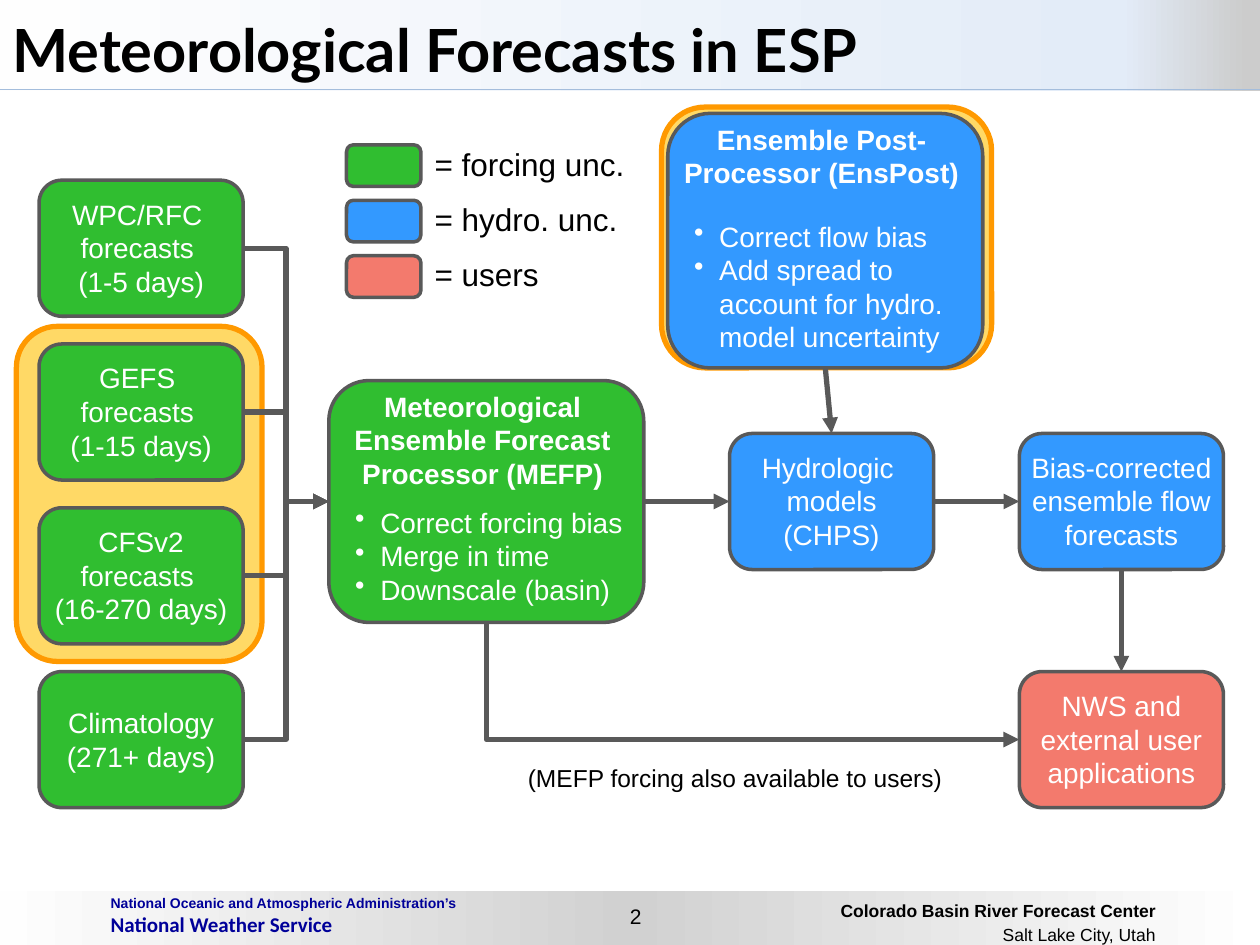
from lxml import etree
from pptx import Presentation
from pptx import util as u
from pptx.dml.color import RGBColor
from pptx.enum import shapes, text
from pptx.oxml.ns import qn

BLACK, WHITE = RGBColor(0, 0, 0), RGBColor(255, 255, 255)
NAVY = RGBColor(0x00, 0x00, 0x99)
GREEN = RGBColor(0x30, 0xBE, 0x30)
BLUE = RGBColor(0x33, 0x99, 0xFF)
RED = RGBColor(0xF3, 0x7A, 0x6D)
GRAY = RGBColor(0x59, 0x59, 0x59)
YELLOW = RGBColor(0xFF, 0xD9, 0x66)
ORANGE = RGBColor(0xFF, 0x99, 0x00)
RULE = RGBColor(0xA4, 0xBD, 0xDC)
LEFT, CENTER, RIGHT = text.PP_ALIGN.LEFT, text.PP_ALIGN.CENTER, text.PP_ALIGN.RIGHT
TOP_SITE, LEFT_SITE, BOTTOM_SITE, RIGHT_SITE = range(4)

# Content: bands as (place, gradient stops)
BANDS = [
    ((0, 7.07, 10, 0.44), [(0, "FEFEFE"), (50, "D1D1D1"), (100, "FFFFFF")]),
    ((0, 0, 10, 0.72), [(0, "FEFEFE"), (89, "E3ECF8"), (99, "CCCCCC"), (100, "CCCCCC")]),
]
HALOS = [(5.25, 0.85, 2.62, 2.07), (0.13, 2.59, 1.95, 2.66)]
SOURCES = [
    ["WPC/RFC ", "forecasts ", "(1-5 days)"],
    ["GEFS ", "forecasts ", "(1-15 days)"],
    ["CFSv2", "forecasts ", "(16-270 days)"],
    ["Climatology", "(271+ days)"],
]
# Stages as name: (left, top, fill, label width, lines shown, paragraphs)
STAGES = {
    "models": (5.79, 3.44, BLUE, 1.48, 3, ["Hydrologic ", "models (CHPS)"]),
    "flow": (8.09, 3.44, BLUE, 1.68, 3, ["Bias-corrected ensemble flow forecasts"]),
    "users": (8.09, 5.33, RED, 1.68, 3, ["NWS and external user applications"]),
}
# Processors as name: (place, fill, heading, bullets, bullet top, bullet height)
PROCESSORS = {
    "MEFP": ((2.61, 3.02, 2.5, 1.92), GREEN,
             "Meteorological Ensemble Forecast Processor (MEFP)",
             ["Correct forcing bias", "Merge in time", "Downscale (basin)"], 3.96, 0.91),
    "EnsPost": ((5.3, 0.9, 2.5, 2.02), BLUE,
                "Ensemble Post-Processor (EnsPost)",
                ["Correct flow bias",
                 "Add spread to account for hydro. model uncertainty"], 1.69, 1.18),
}
LEGEND = [(GREEN, "= forcing unc."), (BLUE, "= hydro. unc."), (RED, "= users")]

NODE_W, NODE_H = 1.62, 1.08
SOURCE_LEFT, SOURCE_TOP, SOURCE_PITCH = 0.31, 1.43, 1.3
LEGEND_TOP, LEGEND_PITCH = 1.15, 0.44
LINE_H, PADDING = 0.27, 0.1

deck = Presentation()
deck.slide_width, deck.slide_height = u.Inches(10), u.Inches(7.5)
page = deck.slides.add_slide(deck.slide_layouts[6])


def inches(place):
    return [u.Inches(value) for value in place]


def add_text(place, lines, size=16, font="Arial", color=WHITE, bold=False, align=LEFT,
             bullet=False, before=0, spacing=None, inset=(0.1, 0.05, 0.1, 0.05)):
    """Add a text box with one paragraph per line, all in one format."""
    box = page.shapes.add_textbox(*inches(place))
    frame = box.text_frame
    frame.word_wrap = True
    frame.vertical_anchor = text.MSO_ANCHOR.TOP
    (frame.margin_left, frame.margin_top,
     frame.margin_right, frame.margin_bottom) = inches(inset)
    for index, line in enumerate(lines):
        para = frame.paragraphs[0] if index == 0 else frame.add_paragraph()
        para.alignment = align
        if spacing:
            para.line_spacing = spacing
        if before and index:
            para.space_before = u.Pt(before)
        if bullet:
            props = para._p.get_or_add_pPr()
            props.set("marL", str(u.Inches(0.2)))
            props.set("indent", str(u.Inches(-0.2)))
            etree.SubElement(props, qn("a:buChar"), char="•")
        span = para.add_run()
        span.text = line
        span.font.name, span.font.size, span.font.bold = font, u.Pt(size), bold
        span.font.color.rgb = color
    return box


def add_box(place, fill, line=GRAY, width=2):
    box = page.shapes.add_shape(shapes.MSO_SHAPE.ROUNDED_RECTANGLE, *inches(place))
    box.adjustments[0] = 0.167
    box.shadow.inherit = False
    box.fill.solid()
    box.fill.fore_color.rgb = fill
    box.line.color.rgb, box.line.width = line, u.Pt(width)
    return box


def add_band(place, stops):
    band = page.shapes.add_shape(shapes.MSO_SHAPE.RECTANGLE, *inches(place))
    band.shadow.inherit = False
    band.line.fill.background()
    band.fill.gradient()
    band.fill.gradient_angle = 0
    stop_list = band._element.spPr.find(".//" + qn("a:gsLst"))
    for stop in list(stop_list):
        stop_list.remove(stop)
    for position, color in stops:
        stop = etree.SubElement(stop_list, qn("a:gs"), pos=str(position * 1000))
        etree.SubElement(stop, qn("a:srgbClr"), val=color)


def add_line(kind, ends=(0, 0, 0, 0), color=GRAY, width=3, arrow=None):
    line = page.shapes.add_connector(kind, *inches(ends))
    line.line.color.rgb, line.line.width = color, u.Pt(width)
    if arrow:
        etree.SubElement(line.line._get_or_add_ln(), qn("a:" + arrow), type="triangle")
    etree.SubElement(line._element.spPr, qn("a:effectLst"))
    return line


def join(start, start_site, end, end_site, kind=shapes.MSO_CONNECTOR.STRAIGHT, arrow="tailEnd"):
    line = add_line(kind, arrow=arrow)
    line.begin_connect(start, start_site)
    line.end_connect(end, end_site)
    return line


def add_node(left, top, fill, label_width, line_count, lines):
    """Add a small box with its label centred on it."""
    box = add_box((left, top, NODE_W, NODE_H), fill)
    height = line_count * LINE_H + PADDING
    add_text((left + (NODE_W - label_width) / 2, top + (NODE_H - height) / 2,
              label_width, height), lines, align=CENTER)
    return box


def add_processor(place, fill, heading, bullets, bullet_top, bullet_height):
    left, top = place[:2]
    box = add_box(place, fill)
    add_text((left, top + 0.02, 2.44, 0.91), [heading], bold=True, align=CENTER)
    add_text((left + 0.11, bullet_top, 2.35, bullet_height), bullets, bullet=True)
    return box


# Header and footer
for place, stops in BANDS:
    add_band(place, stops)
add_line(shapes.MSO_CONNECTOR.STRAIGHT, (0, 0.71, 10, 0.71), RULE, 0.75)
add_text((0, 0, 10, 0.72), ["Meteorological Forecasts in ESP"], size=34, font="Lato",
         color=BLACK, bold=True, inset=(0.1, 0.1, 0.1, 0.1))
agency = add_text((0.78, 7.05, 3.33, 0.43),
                  ["National Oceanic and Atmospheric Administration’s",
                   "National Weather Service"], size=8, color=NAVY, bold=True)
service = agency.text_frame.paragraphs[1].runs[0].font
service.name, service.size = "Calibri", u.Pt(12)
center = add_text((6.5, 7.07, 2.72, 0.44),
                  ["Colorado Basin River Forecast Center", "Salt Lake City, Utah"],
                  size=10, color=BLACK, bold=True, align=RIGHT, spacing=1.15,
                  inset=(0.01, 0.05, 0.05, 0.05))
center.text_frame.paragraphs[1].runs[0].font.bold = False
add_text((4.84, 7.12, 0.41, 0.3), ["2"], size=12, color=BLACK, align=CENTER)

# Flow boxes
for place in HALOS:
    add_box(place, YELLOW, ORANGE, 3)
nodes = {name: add_node(*stage) for name, stage in STAGES.items()}
for name, processor in PROCESSORS.items():
    nodes[name] = add_processor(*processor)
sources = [add_node(SOURCE_LEFT, SOURCE_TOP + index * SOURCE_PITCH, GREEN,
                    NODE_W, len(lines), lines)
           for index, lines in enumerate(SOURCES)]

# Arrows
ELBOW = shapes.MSO_CONNECTOR.ELBOW
for source in sources:
    join(source, RIGHT_SITE, nodes["MEFP"], LEFT_SITE, ELBOW)
join(nodes["MEFP"], RIGHT_SITE, nodes["models"], LEFT_SITE)
join(nodes["models"], RIGHT_SITE, nodes["flow"], LEFT_SITE)
join(nodes["flow"], BOTTOM_SITE, nodes["users"], TOP_SITE)
join(nodes["EnsPost"], BOTTOM_SITE, nodes["models"], TOP_SITE)
# A single bend, drawn from the users box back to MEFP
bypass = join(nodes["users"], LEFT_SITE, nodes["MEFP"], BOTTOM_SITE, ELBOW, "headEnd")
bypass._element.spPr.find(qn("a:prstGeom")).set("prst", "bentConnector2")
add_text((3.92, 6.01, 3.83, 0.34), ["(MEFP forcing also available to users)"],
         size=14, color=BLACK, align=CENTER)

# Legend
for index, (fill, _) in enumerate(LEGEND):
    add_box((2.75, LEGEND_TOP + index * LEGEND_PITCH, 0.59, 0.33), fill)
add_text((3.35, 1.1, 1.72, 1.29), [label for _, label in LEGEND],
         size=18, color=BLACK, before=10)

deck.save("out.pptx")
